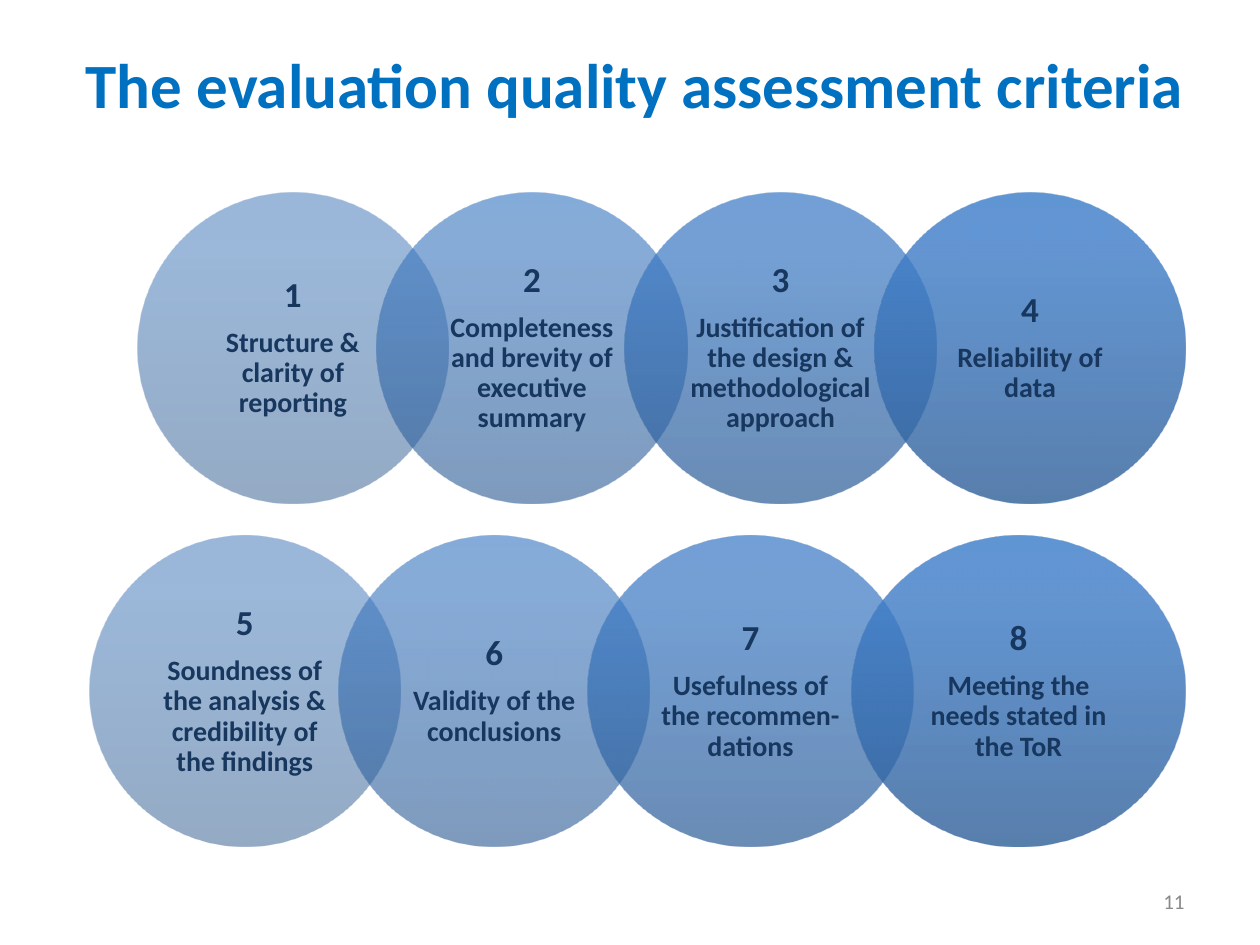
from dataclasses import dataclass

from lxml.etree import SubElement
from pptx import Presentation
from pptx.dml.color import RGBColor
from pptx.enum.shapes import MSO_SHAPE as Shape
from pptx.enum.text import MSO_ANCHOR as Anchor, MSO_AUTO_SIZE as AutoSize, PP_ALIGN as Align
from pptx.oxml.ns import qn
from pptx.util import Cm, Pt

# Content: (label, left, width) for each circle, in cm
TITLE = "The evaluation quality assessment criteria"
PAGE_NUMBER = "11"
ROWS = [
    (3.88, [
        ("Structure & clarity of reporting", 2.77, 6.27),
        ("Completeness and brevity of executive summary", 7.59, 6.27),
        ("Justification of the design & methodological approach", 12.6, 6.27),
        ("Reliability of data", 17.63, 6.27),
    ]),
    (10.8, [
        ("Soundness of the analysis & credibility of the findings", 1.8, 6.27),
        ("Validity of the conclusions", 6.83, 6.27),
        ("Usefulness of the recommen-dations", 11.84, 6.58),
        ("Meeting the needs stated in the ToR", 17.17, 6.73),
    ]),
]
CIRCLE_HEIGHT = 6.27


@dataclass(frozen=True)
class Theme:
    font: str = "Calibri"
    title: str = "0070C0"
    label: str = "17375E"
    muted: str = "898989"
    title_size: int = 36
    number_size: int = 20
    label_size: int = 16
    page_size: int = 12
    stops: tuple = (0, 80, 100)
    # Opacity in percent, then the gradient from bottom to top
    columns: tuple = (
        (50, ("2A568B", "3770B5", "3570B8")),
        (60, ("2A5992", "3774BD", "3474C1")),
        (70, ("2C5C96", "3A78C3", "3778C6")),
        (80, ("306099", "3E7CC7", "3C7DCA")),
    )


THEME = Theme()


def style(para, size, color, align, bold=False):
    para.alignment = align
    font = para.font
    font.name, font.size, font.bold = THEME.font, Pt(size), bold
    font.color.rgb = RGBColor.from_string(color)


def set_frame(frame, side, edge):
    frame.word_wrap = True
    frame.auto_size = AutoSize.NONE
    frame.vertical_anchor = Anchor.MIDDLE
    frame.margin_left = frame.margin_right = Cm(side)
    frame.margin_top = frame.margin_bottom = Cm(edge)


def fill_gradient(shape, opacity, colors):
    """Upward gradient with three translucent stops."""
    shape.fill.gradient()
    shape.fill.gradient_angle = 90
    stop_list = shape._element.spPr.find(".//" + qn("a:gsLst"))
    for stop in list(stop_list):
        stop_list.remove(stop)
    for position, color in zip(THEME.stops, colors):
        stop = SubElement(stop_list, qn("a:gs"), pos=str(position * 1000))
        tint = SubElement(stop, qn("a:srgbClr"), val=color)
        SubElement(tint, qn("a:alpha"), val=str(opacity * 1000))


def add_criterion(page, number, label, left, top, width, look):
    circle = page.shapes.add_shape(
        Shape.OVAL, Cm(left), Cm(top), Cm(width), Cm(CIRCLE_HEIGHT))
    circle.shadow.inherit = False
    circle.line.fill.background()
    fill_gradient(circle, *look)
    frame = circle.text_frame
    set_frame(frame, 0.36, 0.08)
    heading, body = frame.paragraphs[0], frame.add_paragraph()
    for para, text, size in ((heading, str(number), THEME.number_size),
                             (body, label, THEME.label_size)):
        para.text = text
        para.line_spacing = 0.9
        style(para, size, THEME.label, Align.CENTER, bold=True)
    heading.space_after = Pt(7.7)


def main():
    deck = Presentation()
    deck.slide_width, deck.slide_height = Cm(25.4), Cm(19.05)
    page = deck.slides.add_slide(deck.slide_layouts[5])

    # Title
    title = page.shapes.title
    title.left, title.top, title.width, title.height = Cm(1.47), Cm(0.05), Cm(22.66), Cm(3.25)
    title.text_frame.text = TITLE
    set_frame(title.text_frame, 0, 0.13)
    style(title.text_frame.paragraphs[0], THEME.title_size, THEME.title, Align.CENTER, bold=True)

    # Two rows of overlapping circles, numbered across
    number = 1
    for top, criteria in ROWS:
        for (label, left, width), look in zip(criteria, THEME.columns):
            add_criterion(page, number, label, left, top, width, look)
            number += 1

    # Page number
    box = page.shapes.add_textbox(Cm(18.2), Cm(17.66), Cm(5.93), Cm(1.01))
    box.text_frame.text = PAGE_NUMBER
    set_frame(box.text_frame, 0.25, 0.13)
    style(box.text_frame.paragraphs[0], THEME.page_size, THEME.muted, Align.RIGHT)

    deck.save("out.pptx")


if __name__ == "__main__":
    main()
